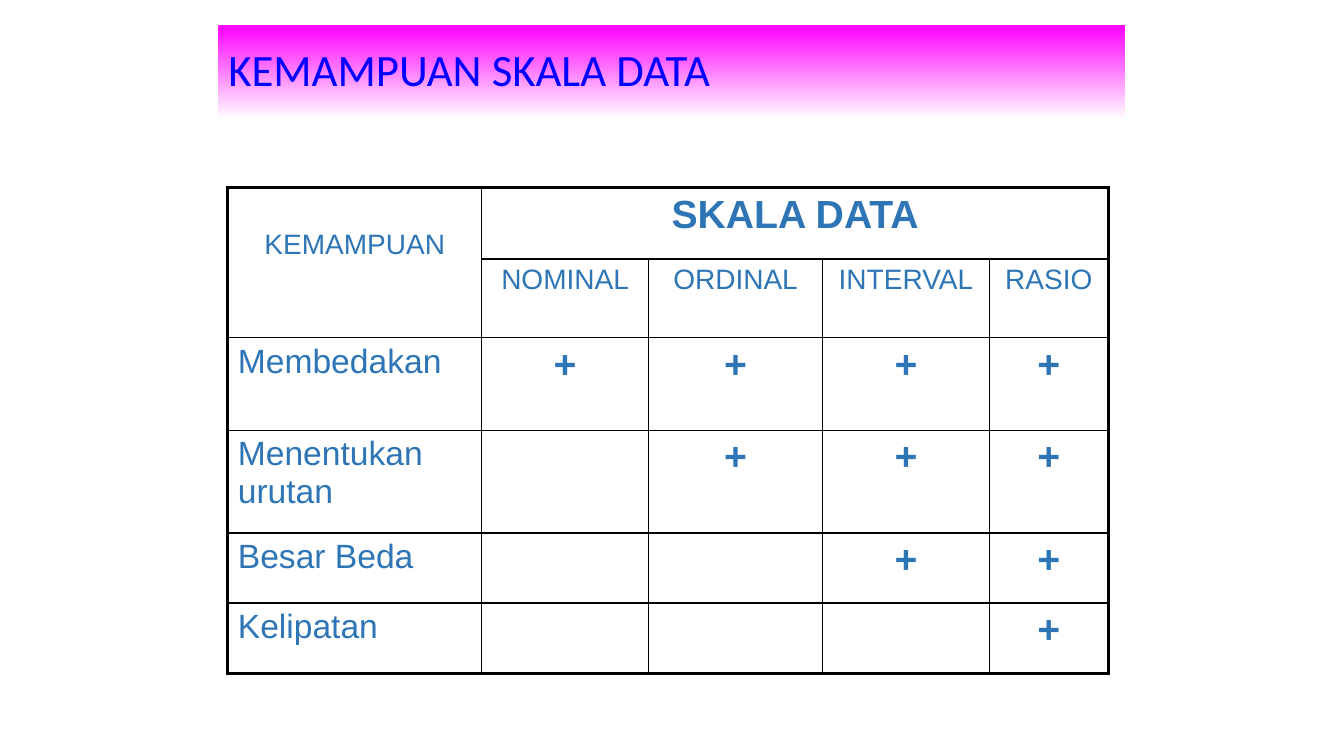
from lxml.etree import SubElement
from pptx import Presentation
from pptx.dml.color import RGBColor
from pptx.enum.shapes import MSO_SHAPE as Shape
from pptx.enum.text import MSO_ANCHOR as Anchor, PP_ALIGN as Align
from pptx.oxml.ns import qn
from pptx.util import Pt

BLACK = RGBColor(0, 0, 0)
WHITE = RGBColor(255, 255, 255)
MAGENTA = RGBColor(255, 0, 255)
TITLE_BLUE = RGBColor(0, 0, 255)
TABLE_BLUE = RGBColor(0x2E, 0x75, 0xB6)
THIN, THICK = 1, 2.25

COLUMN_WIDTHS = [181.5, 119, 124.5, 119, 85]
ROW_HEIGHTS = [51, 56.2, 66.2, 73.4, 50, 50.4]
SCALES = ["NOMINAL", "ORDINAL", "INTERVAL", "RASIO"]
ABILITIES = ["Membedakan", "Menentukan urutan", "Besar Beda", "Kelipatan"]


def write(frame, text, size, color, font="Arial", bold=False, align=Align.LEFT, line=None):
    """Write one formatted paragraph into a text frame."""
    para = frame.paragraphs[0]
    para.alignment = align
    para.line_spacing = line
    span = para.add_run()
    span.text = text
    span.font.name = font
    span.font.size = Pt(size)
    span.font.bold = bold
    span.font.color.rgb = color


def add_title(page, text, left, top, width, height):
    """Add the title band with its vertical gradient."""
    band = page.shapes.add_shape(Shape.RECTANGLE, Pt(left), Pt(top), Pt(width), Pt(height))
    band.shadow.inherit = False
    band.line.fill.background()
    band.fill.gradient()
    band.fill.gradient_angle = 270
    for stop, color in zip(band.fill.gradient_stops, (MAGENTA, WHITE)):
        stop.color.rgb = color
    frame = band.text_frame
    frame.word_wrap = True
    frame.vertical_anchor = Anchor.MIDDLE
    write(frame, text, 32, TITLE_BLUE, font="Calibri", line=0.9)


def set_borders(cell, **widths):
    """Draw the four borders of a cell, each with its width in points."""
    properties = cell._tc.get_or_add_tcPr()
    for side in "LRTB":
        border = SubElement(properties, qn(f"a:ln{side}"), w=str(int(Pt(widths[side]))))
        fill = SubElement(border, qn("a:solidFill"))
        SubElement(fill, qn("a:srgbClr"), val=str(BLACK))


def add_grid(page, left, top):
    """Add an unfilled table with a thick frame and thin inner lines."""
    rows, columns = len(ROW_HEIGHTS), len(COLUMN_WIDTHS)
    table = page.shapes.add_table(rows, columns, Pt(left), Pt(top),
                                  Pt(sum(COLUMN_WIDTHS)), Pt(sum(ROW_HEIGHTS))).table
    table.first_row = table.horz_banding = False
    for column, width in zip(table.columns, COLUMN_WIDTHS):
        column.width = Pt(width)
    for row, height in zip(table.rows, ROW_HEIGHTS):
        row.height = Pt(height)
    table.cell(0, 0).merge(table.cell(1, 0))
    table.cell(0, 1).merge(table.cell(0, columns - 1))
    for r in range(rows):
        for c in range(columns):
            cell = table.cell(r, c)
            last_row = r + cell.span_height == rows
            last_column = c + cell.span_width == columns
            set_borders(cell, L=THIN if c else THICK, T=THIN if r else THICK,
                        R=THICK if last_column else THIN, B=THICK if last_row else THIN)
            cell.fill.background()
    return table


def fill_grid(table):
    """Write the headings and mark which scale has which ability."""
    def put(row, column, text, size, **style):
        write(table.cell(row, column).text_frame, text, size, TABLE_BLUE, **style)

    table.cell(0, 0).margin_top = Pt(30)
    put(0, 0, "KEMAMPUAN", 20, align=Align.CENTER)
    put(0, 1, "SKALA DATA", 28, bold=True, align=Align.CENTER)
    for column, scale in enumerate(SCALES, 1):
        put(1, column, scale, 20, align=Align.CENTER)
    for level, ability in enumerate(ABILITIES):
        put(level + 2, 0, ability, 24)
        for column in range(level + 1, len(SCALES) + 1):
            put(level + 2, column, "+", 28, bold=True, align=Align.CENTER)


def main():
    """Build the slide and save it."""
    deck = Presentation()
    deck.slide_width, deck.slide_height = Pt(960), Pt(540)
    page = deck.slides.add_slide(deck.slide_layouts[6])
    fill_grid(add_grid(page, 162.7, 134))
    add_title(page, "KEMAMPUAN SKALA DATA", 156, 18, 648, 67)
    deck.save("out.pptx")


if __name__ == "__main__":
    main()
